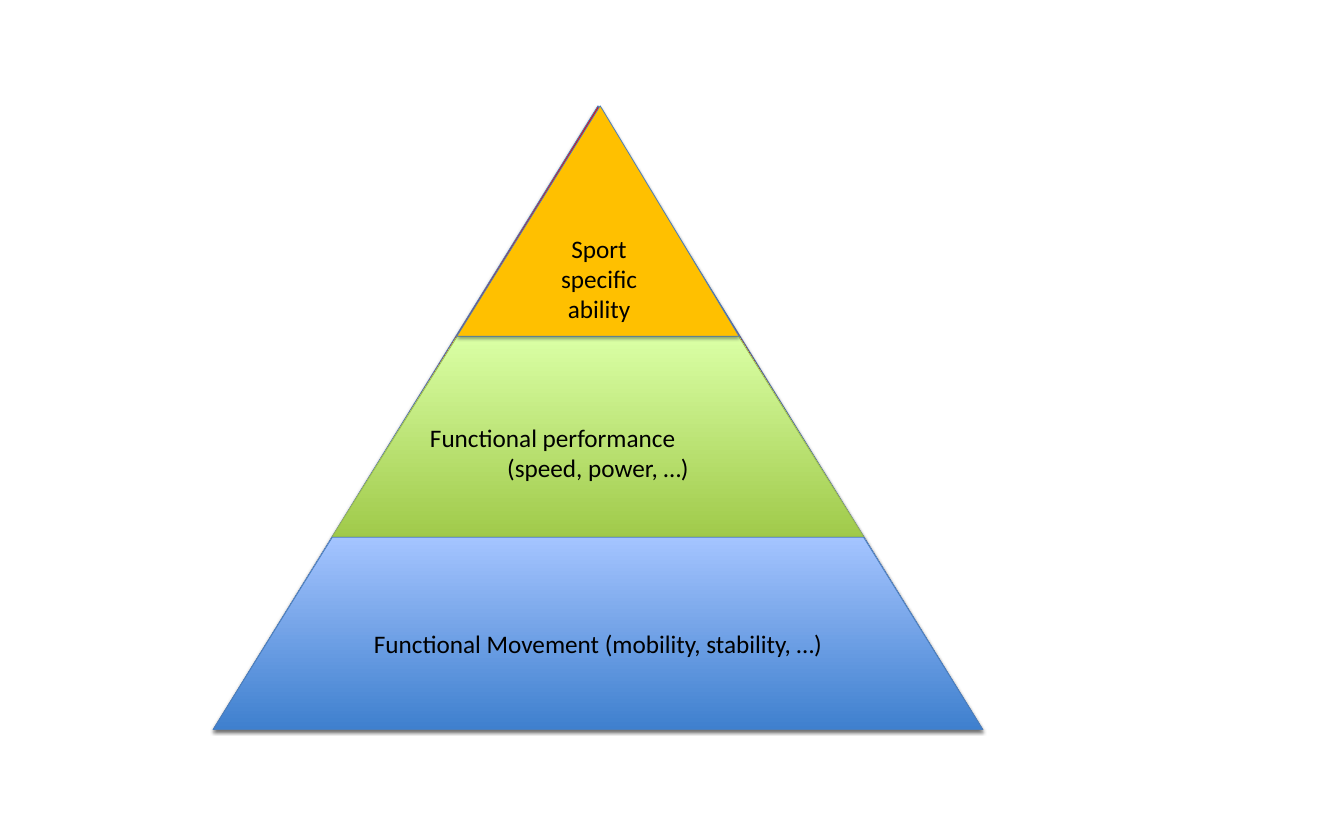
import dataclasses

import pptx
import pptx.dml.color
import pptx.enum.shapes
import pptx.enum.text
import pptx.oxml.ns
import pptx.util
from lxml import etree

Pt = pptx.util.Pt
Kind = pptx.enum.shapes.MSO_SHAPE
Align = pptx.enum.text.PP_ALIGN
qn = pptx.oxml.ns.qn


@dataclasses.dataclass(frozen=True)
class Theme:
    font: str = "Calibri"
    size: float = 24
    line: float = 0.75
    ink: str = "000000"
    red: str = "FF0000"
    gold: str = "FFC000"
    greens: tuple = ("A0CA4A", "DAFFA5")
    blues: tuple = ("3F80CE", "A4C4FF")
    edge: str = "4B7EBC"
    moss: str = "98B955"


THEME = Theme()
CENTER = 569.5
TOP = 100.8


def rgb(code):
    return pptx.dml.color.RGBColor.from_string(code)


def paint(shape, fill):
    if isinstance(fill, str):
        shape.fill.solid()
        shape.fill.fore_color.rgb = rgb(fill)
        return
    shape.fill.gradient()
    shape.fill.gradient_angle = 90
    for stop, place, code in zip(shape.fill.gradient_stops, (0, 1), fill):
        stop.position = place
        stop.color.rgb = rgb(code)


def shade(shape):
    shape.shadow.inherit = False
    effects = shape._element.spPr.find(qn("a:effectLst"))
    outer = etree.SubElement(
        effects, qn("a:outerShdw"), blurRad=str(Pt(3.1)), dist=str(Pt(1.8)),
        dir="5400000", rotWithShape="0")
    color = etree.SubElement(outer, qn("a:srgbClr"), val=THEME.ink)
    etree.SubElement(color, qn("a:alpha"), val="35000")


def add_tier(slide, kind, top, width, height, fill, edge, slope):
    shape = slide.shapes.add_shape(
        kind, Pt(CENTER - width / 2), Pt(top), Pt(width), Pt(height))
    shape.adjustments[0] = slope
    paint(shape, fill)
    shape.line.color.rgb = rgb(edge)
    shape.line.width = Pt(THEME.line)
    shade(shape)
    return shape


def write(shape, lines):
    frame = shape.text_frame
    frame.word_wrap = True
    frame.vertical_anchor = pptx.enum.text.MSO_ANCHOR.MIDDLE
    for index, (text, align, indent) in enumerate(lines):
        para = frame.add_paragraph() if index else frame.paragraphs[0]
        para.alignment = align
        if indent:
            para._p.get_or_add_pPr().set("marL", str(Pt(indent)))
        run = para.add_run()
        run.text = text
        run.font.name = THEME.font
        run.font.size = Pt(THEME.size)
        run.font.color.rgb = rgb(THEME.ink)


def main():
    deck = pptx.Presentation()
    deck.slide_width, deck.slide_height = Pt(1280), Pt(800)
    slide = deck.slides.add_slide(deck.slide_layouts[6])

    tip, middle, base = 219.4, 191.6, 183
    add_tier(slide, Kind.ISOSCELES_TRIANGLE, TOP, 733, tip + middle + base,
             THEME.red, THEME.edge, 0.5)

    power = add_tier(slide, Kind.TRAPEZOID, TOP + tip, 506.9, middle,
                     THEME.greens, THEME.moss, 0.624)
    write(power, [("Functional performance", Align.LEFT, 6.7),
                  ("(speed, power, …)", Align.CENTER, 0)])

    motion = add_tier(slide, Kind.TRAPEZOID, TOP + tip + middle, 733, base,
                      THEME.blues, THEME.edge, 0.62)
    write(motion, [("Functional Movement (mobility, stability, …)",
                    Align.CENTER, 0)])

    sport = add_tier(slide, Kind.ISOSCELES_TRIANGLE, TOP, 268.6, tip,
                     THEME.gold, THEME.edge, 0.508)
    write(sport, [("Sport specific ability", Align.CENTER, 0)])

    deck.save("out.pptx")


if __name__ == "__main__":
    main()
